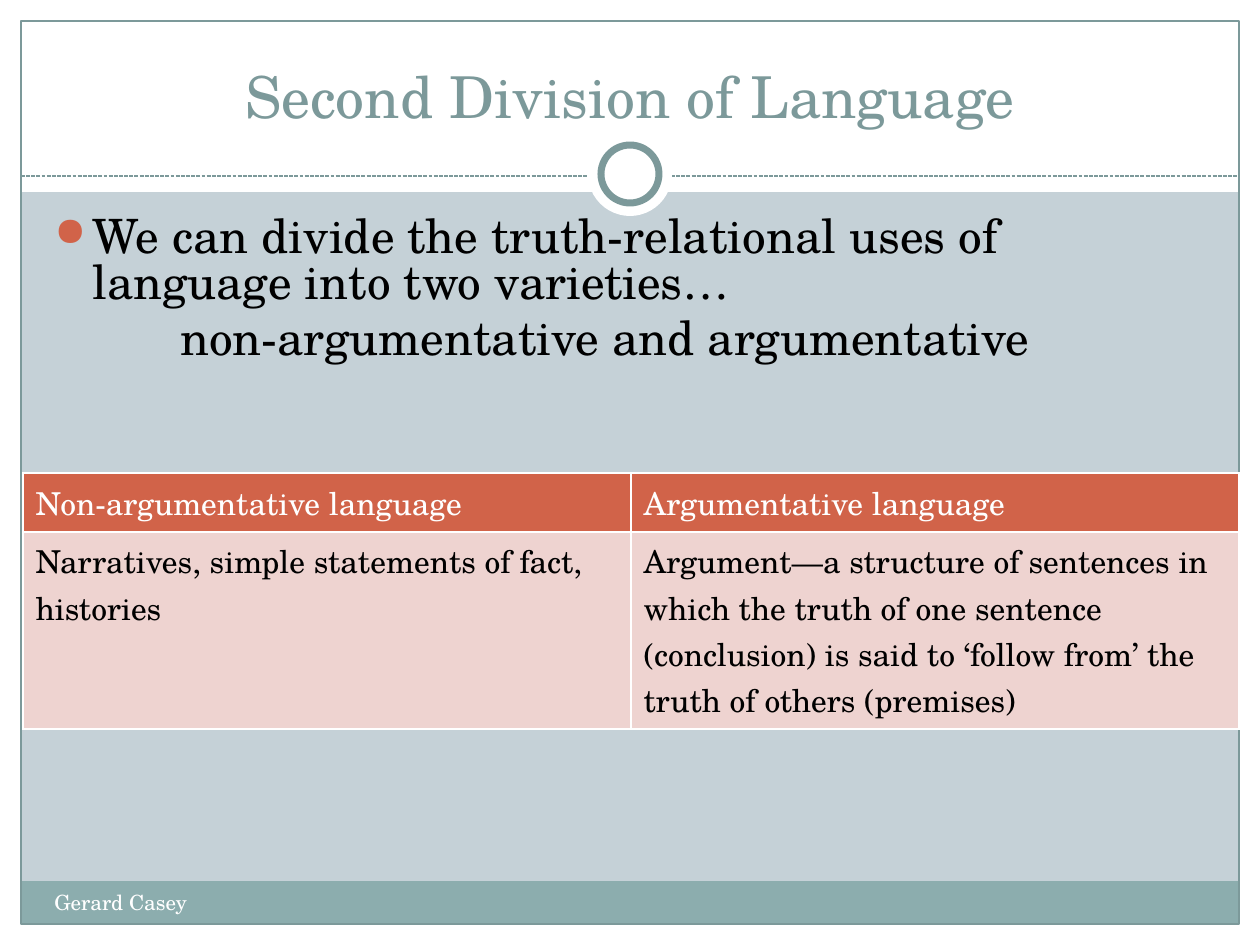
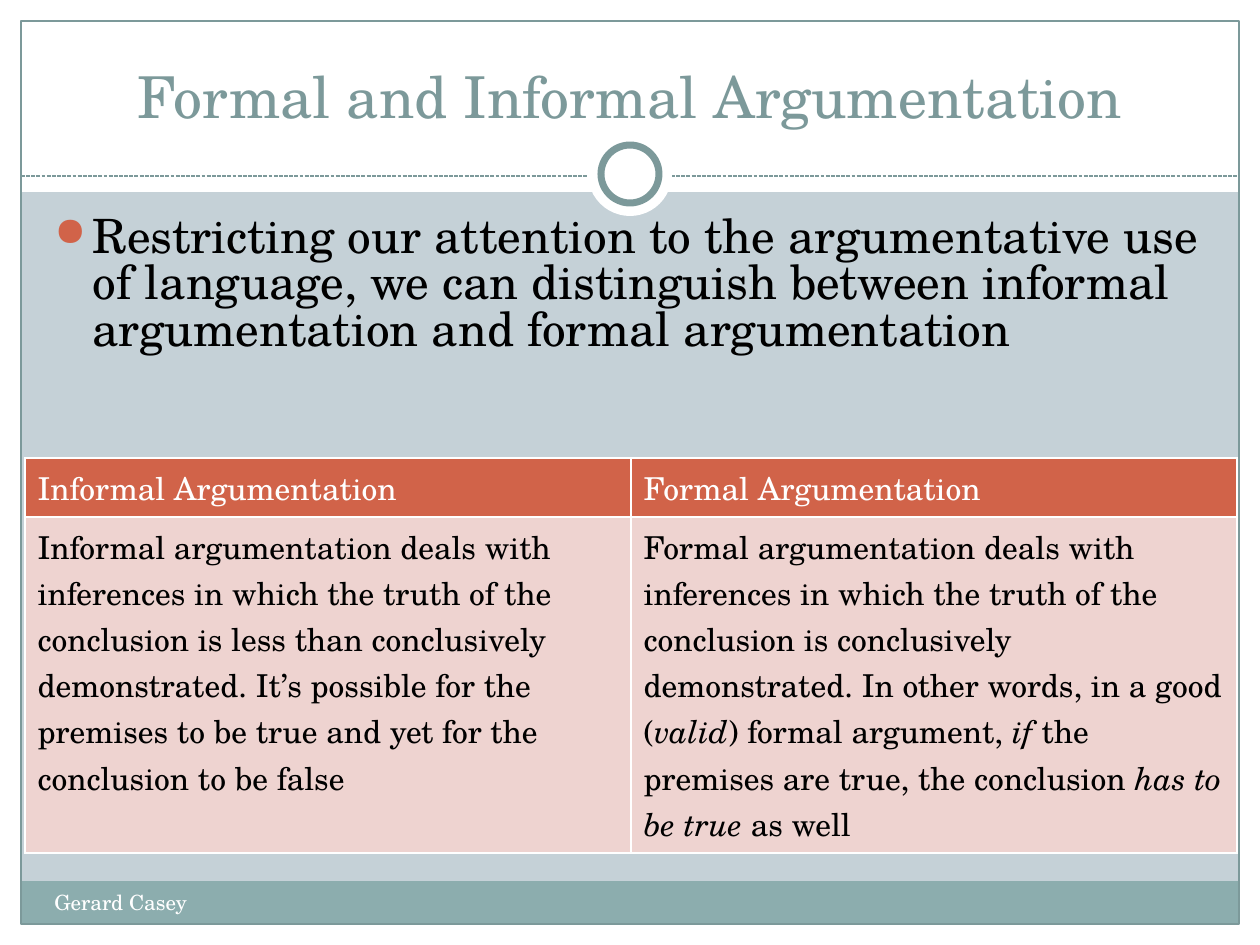
from lxml import etree
from pptx import Presentation
from pptx.dml.color import RGBColor
from pptx.enum.dml import MSO_LINE
from pptx.enum.shapes import MSO_CONNECTOR, MSO_SHAPE
from pptx.enum.text import MSO_ANCHOR, MSO_AUTO_SIZE, PP_ALIGN
from pptx.oxml.ns import qn
from pptx.util import Emu, Pt

RECT = MSO_SHAPE.RECTANGLE
OVAL = MSO_SHAPE.OVAL
STRAIGHT = MSO_CONNECTOR.STRAIGHT
DASH = MSO_LINE.SQUARE_DOT
BOTTOM = MSO_ANCHOR.BOTTOM
CENTER = PP_ALIGN.CENTER
NO_FIT = MSO_AUTO_SIZE.NONE

FONT = "TeX Gyre Schola"
COLORS = {
    "backdrop": "C5D1D7",
    "white": "FFFFFF",
    "black": "000000",
    "teal": "7C999A",
    "footer": "8CADAE",
    "accent": "D16349",
    "pale": "EED3D0",
}
WIDTH, HEIGHT, MARGIN = 1260, 945, 21
HEADER_BOTTOM, RULE_Y, FOOTER_Y = 192, 176, 881
INDENT, TAB_STOP = 38, 126


def px(length):
    return Emu(round(length * 914400 / 126))


def box(*lengths):
    return [px(length) for length in lengths]


def color(key):
    return RGBColor.from_string(COLORS[key])


def add_run(paragraph, text, size, key, italic=False):
    run = paragraph.add_run()
    run.text = text
    run.font.name = FONT
    run.font.size = Pt(size)
    run.font.bold = False
    run.font.italic = italic
    run.font.color.rgb = color(key)


def add_panel(slide, preset, bounds, fill=None, line=None, weight=0.75):
    panel = slide.shapes.add_shape(preset, *box(*bounds))
    panel.shadow.inherit = False
    if fill:
        panel.fill.solid()
        panel.fill.fore_color.rgb = color(fill)
    else:
        panel.fill.background()
    if line:
        panel.line.color.rgb = color(line)
        panel.line.width = Pt(weight)
    else:
        panel.line.fill.background()


def add_rule(slide):
    rule = slide.shapes.add_connector(
        STRAIGHT, *box(MARGIN, RULE_Y, WIDTH - MARGIN, RULE_Y))
    rule.line.color.rgb = color("teal")
    rule.line.width = Pt(0.75)
    rule.line.dash_style = DASH
    etree.SubElement(rule._element.spPr, qn("a:effectLst"))


def add_ring(slide, diameter, line=None):
    corner = (WIDTH - diameter) / 2, 174 - diameter / 2
    add_panel(slide, OVAL, (*corner, diameter, diameter), "white", line, 4)


def decorate_layout(layout, slide):
    inner_width = WIDTH - 2 * MARGIN
    for bounds in (
        (0, HEIGHT - MARGIN, WIDTH, MARGIN),
        (0, 0, WIDTH, HEADER_BOTTOM),
        (0, 0, MARGIN, HEIGHT),
        (WIDTH - MARGIN, 0, MARGIN, HEIGHT),
    ):
        add_panel(slide, RECT, bounds, "white")
    add_panel(slide, RECT,
              (MARGIN, FOOTER_Y, inner_width, HEIGHT - MARGIN - FOOTER_Y), "footer")
    add_panel(slide, RECT,
              (MARGIN, MARGIN, inner_width, HEIGHT - 2 * MARGIN), line="teal")
    add_rule(slide)
    add_ring(slide, 84)
    add_ring(slide, 58, "teal")
    decorations = [part for part in slide.shapes if not part.is_placeholder]
    for number, part in enumerate(decorations, 101):
        part._element.xpath(".//p:cNvPr")[0].set("id", str(number))
        layout.shapes._spTree.append(part._element)


def set_title(slide, text):
    title = slide.shapes.title
    title.left, title.top, title.width, title.height = box(42, 31, 1176, 105)
    frame = title.text_frame
    frame.auto_size = NO_FIT
    frame.vertical_anchor = BOTTOM
    paragraph = frame.paragraphs[0]
    paragraph.alignment = CENTER
    add_run(paragraph, text, 33, "teal")


def add_text_frame(slide, bounds):
    frame = slide.shapes.add_textbox(*box(*bounds)).text_frame
    frame.word_wrap = True
    return frame


def add_bullet(paragraph):
    properties = paragraph._p.get_or_add_pPr()
    properties.set("marL", str(px(INDENT)))
    properties.set("indent", str(-px(INDENT)))
    bullet_color = etree.SubElement(properties, qn("a:buClr"))
    etree.SubElement(bullet_color, qn("a:srgbClr"), val=COLORS["accent"])
    etree.SubElement(properties, qn("a:buSzPct"), val="85000")
    etree.SubElement(properties, qn("a:buChar"), char="●")


def add_statement(slide, point, continuation=None):
    frame = add_text_frame(slide, (42, 210, 1172, 630))
    paragraphs = [frame.paragraphs[0]]
    if continuation:
        paragraphs.append(frame.add_paragraph())
    for paragraph, text in zip(paragraphs, (point, continuation)):
        paragraph.line_spacing = 0.82
        paragraph.space_before = Pt(5.4)
        add_run(paragraph, text, 27, "black")
    add_bullet(paragraphs[0])
    if continuation:
        paragraphs[1]._p.get_or_add_pPr().set("marL", str(px(TAB_STOP)))


def add_borders(cell):
    properties = cell._tc.get_or_add_tcPr()
    for side in ("lnL", "lnR", "lnT", "lnB"):
        border = etree.SubElement(properties, qn(f"a:{side}"), w=str(Pt(1)))
        fill = etree.SubElement(border, qn("a:solidFill"))
        etree.SubElement(fill, qn("a:srgbClr"), val=COLORS["white"])


def fill_cell(cell, runs, fill, ink):
    add_borders(cell)
    cell.fill.solid()
    cell.fill.fore_color.rgb = color(fill)
    for text, italic in runs:
        add_run(cell.text_frame.paragraphs[0], text, 18, ink, italic)


def add_comparison(slide, left, top, width, row_heights, headings, descriptions):
    table = slide.shapes.add_table(
        2, 2, *box(left, top, width, sum(row_heights))).table
    for row, height in zip(table.rows, row_heights):
        row.height = px(height)
    for index, (heading, runs) in enumerate(zip(headings, descriptions)):
        table.columns[index].width = px(width / 2)
        fill_cell(table.cell(0, index), [(heading, False)], "accent", "white")
        fill_cell(table.cell(1, index), runs, "pale", "black")


def add_footer(slide):
    frame = add_text_frame(slide, (42, 883, 494, 50))
    add_run(frame.paragraphs[0], "Gerard Casey", 12, "white")


def main():
    deck = Presentation()
    deck.slide_width, deck.slide_height = box(WIDTH, HEIGHT)
    backdrop = deck.slide_master.background.fill
    backdrop.solid()
    backdrop.fore_color.rgb = color("backdrop")
    layout = deck.slide_layouts[5]

    division = deck.slides.add_slide(layout)
    decorate_layout(layout, division)
    set_title(division, "Second Division of Language")
    add_statement(
        division,
        "We can divide the truth-relational uses of language into two varieties…",
        "non-argumentative and argumentative")
    add_comparison(
        division, 23, 473, 1216, (59, 197),
        ("Non-argumentative language", "Argumentative language"),
        ([("Narratives, simple statements of fact, histories", False)],
         [("Argument—a structure of sentences in which the truth of one sentence "
           "(conclusion) is said to ‘follow from’ the truth of others (premises)",
           False)]))
    add_footer(division)

    argumentation = deck.slides.add_slide(layout)
    set_title(argumentation, "Formal and Informal Argumentation")
    add_statement(
        argumentation,
        "Restricting our attention to the argumentative use of language, we can "
        "distinguish between informal argumentation and formal argumentation")
    add_comparison(
        argumentation, 25, 458, 1212, (59, 336),
        ("Informal Argumentation", "Formal Argumentation"),
        ([("Informal argumentation deals with inferences in which the truth of the "
           "conclusion is less than conclusively demonstrated. It’s possible for the "
           "premises to be true and yet for the conclusion to be false", False)],
         [("Formal argumentation deals with inferences in which the truth of the "
           "conclusion is conclusively demonstrated. In other words, in a good (",
           False),
          ("valid", True),
          (") formal argument, ", False),
          ("if ", True),
          ("the premises are true, the conclusion ", False),
          ("has to be true ", True),
          ("as well", False)]))
    add_footer(argumentation)

    deck.save("out.pptx")


if __name__ == "__main__":
    main()
